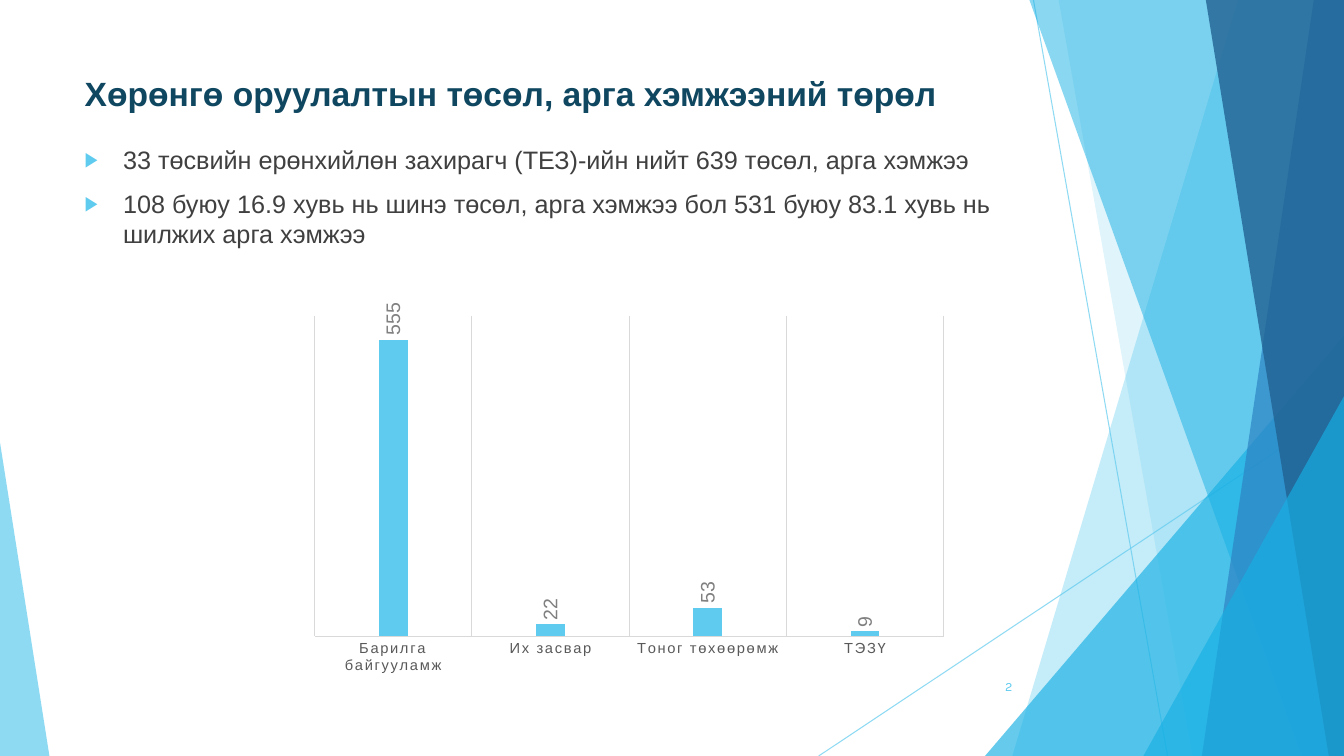
from dataclasses import dataclass

from lxml import etree
from pptx import Presentation
from pptx import util as u
from pptx.chart.data import CategoryChartData
from pptx.dml.color import RGBColor
from pptx.enum import chart as charts, shapes, text
from pptx.oxml import parse_xml
from pptx.oxml.ns import nsdecls, qn


@dataclass(frozen=True)
class Theme:
    sky: str = "5FCBEF"
    cyan: str = "17B0E4"
    blue: str = "2E83C3"
    navy: str = "226292"
    heading: str = "0F4761"
    copy: str = "404040"
    axis_text: str = "595959"
    label_text: str = "808080"
    rule: str = "D9D9D9"
    font: str = "Arial"
    number_font: str = "Karla"
    heading_size: float = 24
    copy_size: float = 18
    label_size: float = 14
    axis_size: float = 10.5
    number_size: float = 9
    thin: float = 0.75


@dataclass(frozen=True)
class Ray:
    start: tuple[float, float]
    end: tuple[float, float]


@dataclass(frozen=True)
class Band:
    top_left: float
    bottom_left: float
    color: str
    alpha: int


@dataclass(frozen=True)
class Corner:
    left: float
    top: float
    width: float
    apex: float
    color: str
    alpha: int


THEME = Theme()
WIDTH, HEIGHT = 13.33, 7.5
RAYS = [Ray((10.25, 0), (11.58, HEIGHT)), Ray((WIDTH, 4.03), (8.12, HEIGHT))]
FACETS = [
    Band(12.28, 10.04, THEME.sky, 36),
    Band(10.5, 11.83, THEME.sky, 20),
    Corner(9.77, 3.33, 3.56, 1, THEME.cyan, 66),
    Band(10.21, 12.91, THEME.cyan, 50),
    Band(13.03, 11.92, THEME.blue, 70),
    Band(11.96, 13.18, THEME.navy, 80),
    Corner(11.34, 3.93, 1.99, 1, THEME.cyan, 66),
    Corner(0, 4.39, 0.49, 0, THEME.sky, 70),
]
TITLE = "Хөрөнгө оруулалтын төсөл, арга хэмжээний төрөл"
POINTS = [
    "33 төсвийн ерөнхийлөн захирагч (ТЕЗ)-ийн нийт 639 төсөл, арга хэмжээ",
    "108 буюу 16.9 хувь нь шинэ төсөл, арга хэмжээ бол 531 буюу 83.1 хувь нь шилжих арга хэмжээ",
]
PROJECTS = {"Барилга байгууламж": 555, "Их засвар": 22, "Тоног төхөөрөмж": 53, "ТЭЗҮ": 9}


def set_alpha(shape, percent: int) -> None:
    color = next(shape._element.spPr.iter(qn("a:srgbClr")))
    etree.SubElement(color, qn("a:alpha")).set("val", str(percent * 1000))


def draw_ray(page, ray: Ray) -> None:
    points = [u.Inches(value) for value in ray.start + ray.end]
    line = page.shapes.add_connector(shapes.MSO_CONNECTOR.STRAIGHT, *points)
    line.line.color.rgb = RGBColor.from_string(THEME.sky)
    line.line.width = u.Pt(THEME.thin)
    set_alpha(line, 70)
    etree.SubElement(line._element.spPr, qn("a:effectLst"))


def draw_facet(page, facet: Band | Corner) -> None:
    if isinstance(facet, Band):
        outline = [(WIDTH, 0), (WIDTH, HEIGHT), (facet.bottom_left, HEIGHT)]
        builder = page.shapes.build_freeform(u.Inches(facet.top_left), 0)
        builder.add_line_segments([(u.Inches(x), u.Inches(y)) for x, y in outline])
        shape = builder.convert_to_shape()
    else:
        frame = (facet.left, facet.top, facet.width, HEIGHT - facet.top)
        shape = page.shapes.add_shape(
            shapes.MSO_SHAPE.ISOSCELES_TRIANGLE, *(u.Inches(value) for value in frame))
        shape.adjustments[0] = facet.apex
    shape.fill.solid()
    shape.fill.fore_color.rgb = RGBColor.from_string(facet.color)
    shape.line.fill.background()
    shape.shadow.inherit = False
    set_alpha(shape, facet.alpha)


def place(box, left: float, top: float, width: float, height: float) -> None:
    box.left, box.top = u.Inches(left), u.Inches(top)
    box.width, box.height = u.Inches(width), u.Inches(height)
    box.text_frame.word_wrap = True
    box.text_frame.auto_size = text.MSO_AUTO_SIZE.NONE
    box.text_frame.vertical_anchor = text.MSO_ANCHOR.TOP


def style(font, size: float, color: str, name: str = THEME.font, bold: bool = False) -> None:
    font.size, font.name, font.bold = u.Pt(size), name, bold
    font.color.rgb = RGBColor.from_string(color)


def add_span(para, words: str, size: float, color: str, name: str = THEME.font,
             bold: bool = False) -> None:
    span = para.add_run()
    span.text = words
    style(span.font, size, color, name, bold)


def add_bullet(para) -> None:
    para.space_before = u.Pt(10)
    props = para._p.get_or_add_pPr()
    props.set("marL", str(u.Inches(0.38)))
    props.set("indent", str(u.Inches(-0.38)))
    for markup in (f'<a:buClr {nsdecls("a")}><a:srgbClr val="{THEME.sky}"/></a:buClr>',
                   f'<a:buSzPct {nsdecls("a")} val="80000"/>',
                   f'<a:buFont {nsdecls("a")} typeface="{THEME.font}"/>',
                   f'<a:buChar {nsdecls("a")} char="▶"/>'):
        props.append(parse_xml(markup))


def add_project_chart(page) -> None:
    data = CategoryChartData()
    data.categories = list(PROJECTS)
    data.add_series("Series 1", list(PROJECTS.values()))
    frame = [u.Inches(value) for value in (2.99, 3, 6.5, 3.76)]
    chart = page.shapes.add_chart(charts.XL_CHART_TYPE.COLUMN_CLUSTERED, *frame, data).chart
    chart.has_legend = chart.has_title = False
    style(chart.font, THEME.axis_size, THEME.axis_text)
    plot = chart.plots[0]
    plot.gap_width, plot.overlap, plot.vary_by_categories = 444, -90, False
    fill = plot.series[0].format.fill
    fill.solid()
    fill.fore_color.rgb = RGBColor.from_string(THEME.sky)

    plot.has_data_labels = True
    labels = plot.data_labels
    labels.show_value = True
    labels.position = charts.XL_LABEL_POSITION.OUTSIDE_END
    style(labels.font, THEME.label_size, THEME.label_text)
    label_body = labels._element.find(qn("c:txPr")).find(qn("a:bodyPr"))
    label_body.set("rot", "-5400000")
    label_body.set("vert", "horz")

    values = chart.value_axis
    values.minimum_scale, values.maximum_scale = 0, 600
    values.has_major_gridlines = values.visible = False
    names = chart.category_axis
    names.major_tick_mark = names.minor_tick_mark = charts.XL_TICK_MARK.NONE
    names.has_major_gridlines = True
    for line in (names.format.line, names.major_gridlines.format.line):
        line.color.rgb = RGBColor.from_string(THEME.rule)
        line.width = u.Pt(THEME.thin)
    style(names.tick_labels.font, THEME.axis_size, THEME.axis_text)
    next(names._element.iter(qn("a:defRPr"))).set("spc", "120")

    area = chart._chartSpace.chart.plotArea
    for old in area.findall(qn("c:layout")):
        area.remove(old)
    area.insert(0, parse_xml(
        f'<c:layout {nsdecls("c")}><c:manualLayout><c:layoutTarget val="inner"/>'
        '<c:xMode val="edge"/><c:yMode val="edge"/><c:x val="0.02"/><c:y val="0.03"/>'
        '<c:w val="0.96"/><c:h val="0.85"/></c:manualLayout></c:layout>'))


def main() -> None:
    deck = Presentation()
    deck.slide_width, deck.slide_height = u.Inches(WIDTH), u.Inches(HEIGHT)
    page = deck.slides.add_slide(deck.slide_layouts[1])
    for ray in RAYS:
        draw_ray(page, ray)
    for facet in FACETS:
        draw_facet(page, facet)

    title, body = page.shapes.title, page.placeholders[1]
    for box in (title, body):
        page.shapes._spTree.append(box._element)
    place(title, 0.74, 0.67, 9.4, 0.72)
    heading = title.text_frame.paragraphs[0]
    heading.alignment = text.PP_ALIGN.LEFT
    add_span(heading, TITLE, THEME.heading_size, THEME.heading, bold=True)

    place(body, 0.74, 1.38, 9.4, 5.22)
    for index, words in enumerate(POINTS):
        frame = body.text_frame
        para = frame.add_paragraph() if index else frame.paragraphs[0]
        add_bullet(para)
        add_span(para, words, THEME.copy_size, THEME.copy)

    add_project_chart(page)
    number = page.shapes.add_textbox(0, 0, 0, 0)
    place(number, 9.39, 6.61, 0.75, 0.4)
    number.text_frame.vertical_anchor = text.MSO_ANCHOR.MIDDLE
    para = number.text_frame.paragraphs[0]
    para.alignment = text.PP_ALIGN.RIGHT
    add_span(para, "2", THEME.number_size, THEME.sky, THEME.number_font)
    deck.save("out.pptx")


if __name__ == "__main__":
    main()
